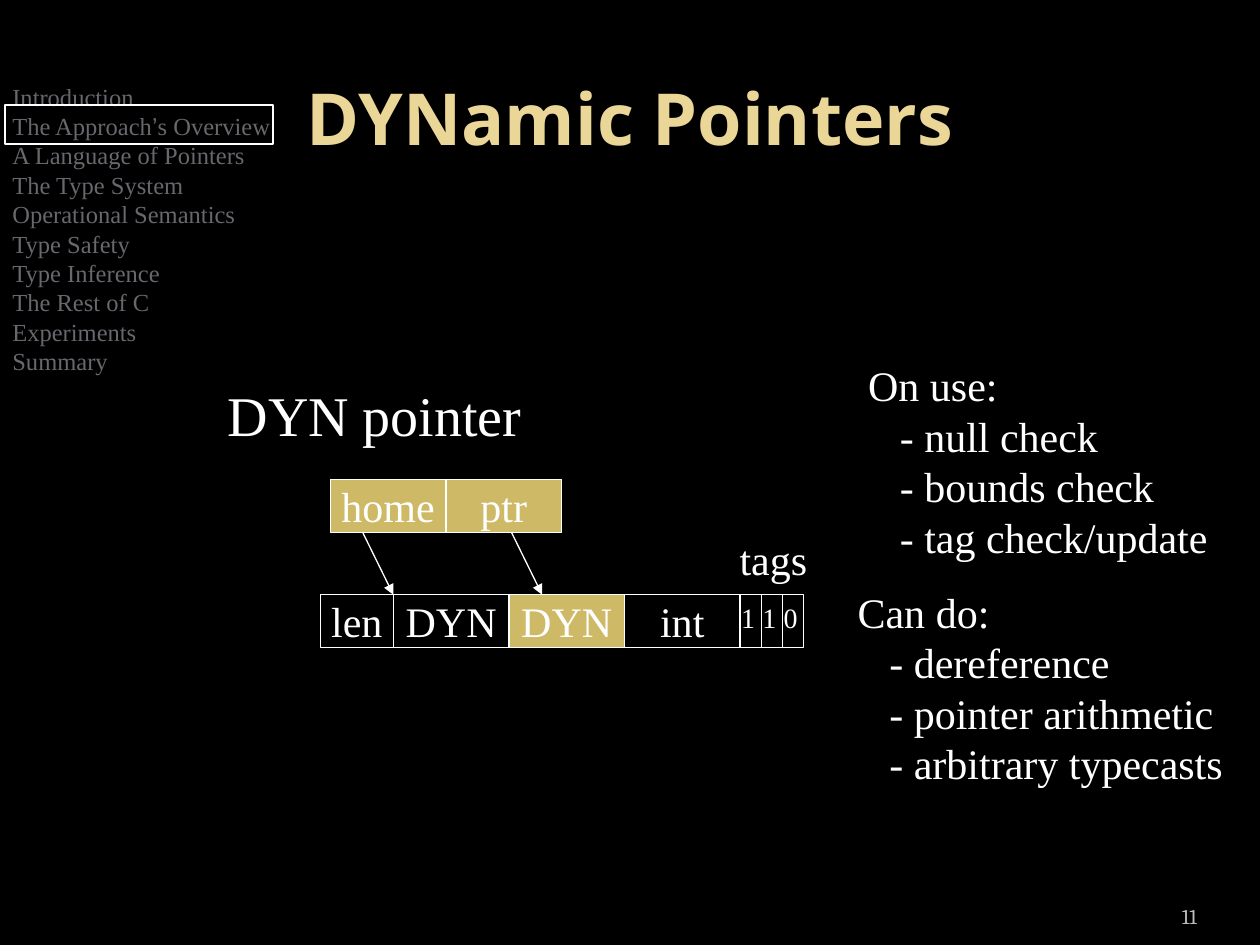
from dataclasses import dataclass

from lxml import etree
from pptx import Presentation
from pptx.dml.color import RGBColor
from pptx.enum.shapes import MSO_CONNECTOR, MSO_SHAPE
from pptx.enum.text import MSO_ANCHOR, MSO_AUTO_SIZE, PP_ALIGN
from pptx.oxml.ns import qn
from pptx.util import Cm, Pt

RECT = MSO_SHAPE.RECTANGLE
STRAIGHT = MSO_CONNECTOR.STRAIGHT
LEFT, CENTER, RIGHT = PP_ALIGN.LEFT, PP_ALIGN.CENTER, PP_ALIGN.RIGHT
TOP, MIDDLE, BOTTOM = MSO_ANCHOR.TOP, MSO_ANCHOR.MIDDLE, MSO_ANCHOR.BOTTOM
FIXED = MSO_AUTO_SIZE.NONE


@dataclass(frozen=True)
class Theme:
    back: str = "000000"
    ink: str = "FFFFFF"
    gold: str = "CEB966"
    title: str = "EAD696"
    muted: str = "69676D"
    number: str = "BDBDBD"
    serif: str = "Times New Roman"
    title_font: str = "Open Sans"
    number_font: str = "Cambria"
    quote_font: str = "Arial"
    title_size: int = 41
    heading_size: int = 32
    body_size: int = 24
    tag_size: int = 16
    outline_size: int = 14
    number_size: int = 12
    line: float = 0.75


THEME = Theme()
OUTLINE = [
    "Introduction", "The Approach’s Overview", "A Language of Pointers",
    "The Type System", "Operational Semantics", "Type Safety",
    "Type Inference", "The Rest of C", "Experiments", "Summary",
]


def color(value):
    return RGBColor.from_string(value)


def add_span(para, text, size, ink=THEME.ink, font=THEME.serif, bold=False):
    span = para.add_run()
    span.text = text
    span.font.color.rgb = color(ink)
    for name, value in {"name": font, "size": Pt(size), "bold": bold}.items():
        setattr(span.font, name, value)


def set_frame(shape, **formats):
    for name, value in formats.items():
        setattr(shape.text_frame, name, value)


def add_label(page, box, lines, size, align=LEFT, anchor=TOP, **style):
    """Place one paragraph per line and return the text box."""
    label = page.shapes.add_textbox(*map(Cm, box))
    set_frame(label, word_wrap=True, vertical_anchor=anchor, auto_size=FIXED)
    frame = label.text_frame
    for index, line in enumerate(lines):
        para = frame.add_paragraph() if index else frame.paragraphs[0]
        para.alignment = align
        for part in line.replace("’", "|’|").split("|"):
            span_style = {**style, "font": THEME.quote_font} if part == "’" else style
            add_span(para, part, size, **span_style)
    return label


def add_cell(page, box, text="", fill=None, width=THEME.line):
    cell = page.shapes.add_shape(RECT, *map(Cm, box))
    cell.shadow.inherit = False
    if fill:
        cell.fill.solid()
        cell.fill.fore_color.rgb = color(fill)
    else:
        cell.fill.background()
    cell.line.color.rgb = color(THEME.ink)
    cell.line.width = Pt(width)
    if text:
        set_frame(cell, word_wrap=False, vertical_anchor=MIDDLE)
        para = cell.text_frame.paragraphs[0]
        para.alignment = CENTER
        add_span(para, text, THEME.body_size)


def add_line(page, start, end, arrow=False):
    line = page.shapes.add_connector(STRAIGHT, *map(Cm, (*start, *end)))
    line.line.color.rgb = color(THEME.ink)
    line.line.width = Pt(THEME.line)
    if arrow:
        etree.SubElement(line.line._get_or_add_ln(), qn("a:tailEnd"), type="triangle")
    etree.SubElement(line._element.spPr, qn("a:effectLst"))


def add_outline(page, box):
    left, top, _, _ = box
    add_label(page, box, OUTLINE, THEME.outline_size, ink=THEME.muted)
    # Frame around the current section
    add_cell(page, (left + 0.1, top + 0.6, 5.41, 0.79), width=1)


def add_note(page, box, heading, items):
    note = add_label(page, box, [heading] + [f"- {item}" for item in items],
                     THEME.body_size)
    for para in note.text_frame.paragraphs[1:]:
        para._p.get_or_add_pPr().set("marL", str(Cm(0.64)))


def add_tags(page, box, values):
    left, top, width, height = box
    add_cell(page, box)
    step = width / len(values)
    for index, value in enumerate(values):
        x = left + index * step
        if index:
            add_line(page, (x, top + height), (x, top))
        add_label(page, (x + step / 2 - 0.55, top, 1, 0.94), [value],
                  THEME.tag_size, CENTER)


def add_diagram(page, box):
    left, top, width, height = box
    cell_width, cell_height = 2.33, 1.06
    memory_top = top + height - cell_height
    pointer_top = memory_top - 2.32

    add_label(page, (left, top, 6.8, 1.6), ["DYN pointer"], THEME.heading_size)

    # Pointer: home and ptr
    pointer_left = left + 2.32
    for index, text in enumerate(("home", "ptr")):
        add_cell(page, (pointer_left + index * cell_width, pointer_top,
                        cell_width, cell_height), text, THEME.gold)

    # Memory: length, words and tags
    x = left + 2.12
    words = [("len", 1.47, None), ("DYN", cell_width, None),
             ("DYN", cell_width, THEME.gold), ("int", cell_width, None)]
    for text, word_width, fill in words:
        add_cell(page, (x, memory_top, word_width, cell_height), text, fill)
        x += word_width
    add_tags(page, (x, memory_top, left + width - x, cell_height), "110")
    add_label(page, (x - 0.26, memory_top - 1.36, 2.1, 1.27), ["tags"],
              THEME.body_size)

    # Arrows from pointer to memory
    for offset in (0.65, 3.65):
        start = pointer_left + offset
        add_line(page, (start, pointer_top + cell_height),
                 (start + 0.62, memory_top), arrow=True)


def build():
    deck = Presentation()
    deck.slide_width, deck.slide_height = Cm(25.4), Cm(19.05)
    page = deck.slides.add_slide(deck.slide_layouts[6])
    page.background.fill.solid()
    page.background.fill.fore_color.rgb = color(THEME.back)

    add_outline(page, (0, 1.52, 6, 6.17))
    add_label(page, (1.27, 0.76, 22.86, 3.18), ["DYNamic Pointers"],
              THEME.title_size, CENTER, MIDDLE,
              ink=THEME.title, font=THEME.title_font, bold=True)
    add_diagram(page, (4.34, 7.54, 11.86, 5.51))
    add_note(page, (17.25, 7.13, 7.8, 4.32), "On use:",
             ["null check", "bounds check", "tag check/update"])
    add_note(page, (17.04, 11.7, 8.2, 4.32), "Can do:",
             ["dereference", "pointer arithmetic", "arbitrary typecasts"])
    number = add_label(page, (22.02, 17.83, 2.11, 1.02), ["11"],
                       THEME.number_size, RIGHT, BOTTOM,
                       ink=THEME.number, font=THEME.number_font)
    set_frame(number, margin_left=0, margin_right=0)
    deck.save("out.pptx")


if __name__ == "__main__":
    build()
